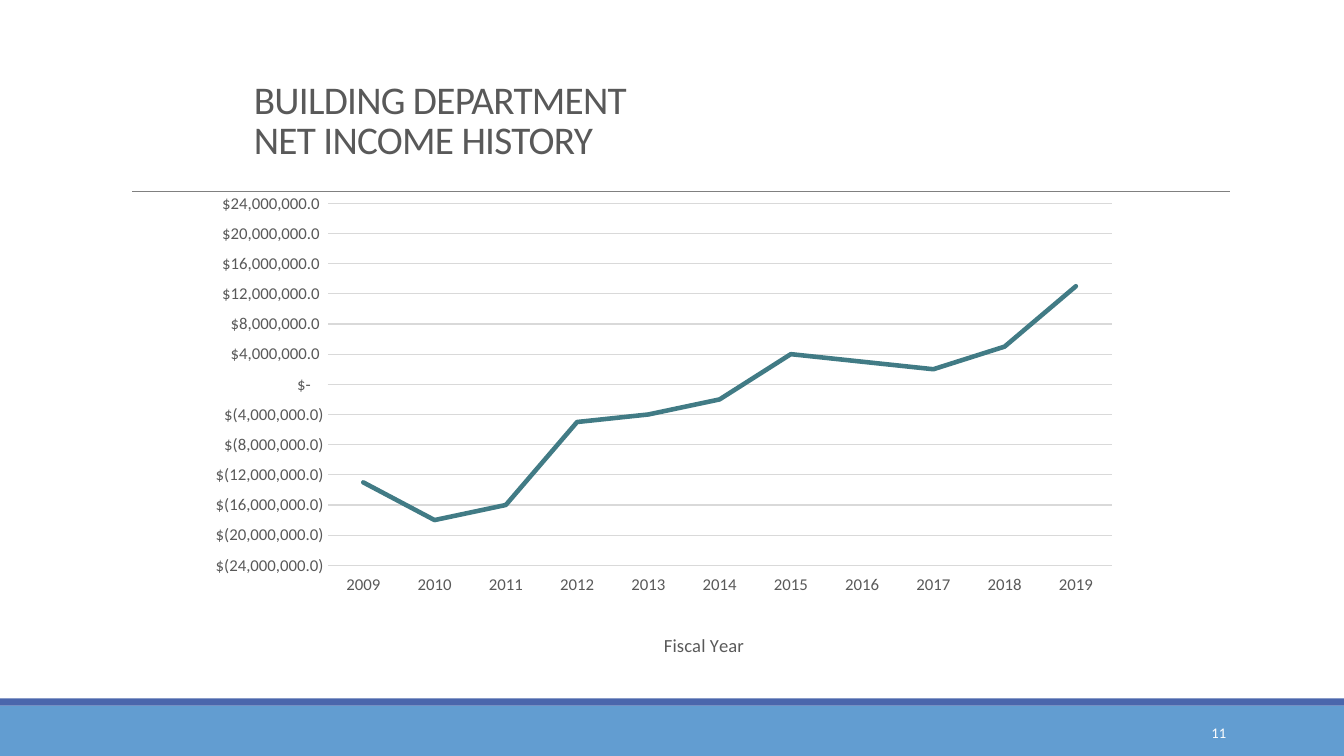
from lxml import etree
from pptx import Presentation
from pptx.chart.data import CategoryChartData
from pptx.dml.color import RGBColor
from pptx.enum import chart as charts, shapes, text
from pptx.oxml import parse_xml
from pptx.oxml.ns import nsdecls, qn
from pptx.util import Inches, Pt

FONT = "Calibri"
GREY, PALE, TEAL, WHITE = "595959", "D9D9D9", "417B85", "FFFFFF"
TITLE = "BUILDING DEPARTMENT\vNET INCOME HISTORY"
PAGE_NUMBER = "11"
FIRST_YEAR = 2009
NET_INCOME_MILLIONS = [-13, -18, -16, -5, -4, -2, 4, 3, 2, 5, 13]
MILLION = 1_000_000
ACCOUNTING = r'_("$"* #,##0.0_);_("$"* \(#,##0.0\);_("$"* "-"?_);_(@_)'
FOOTER_BANDS = [(7, 0.5, "629DD1"), (6.93, 0.07, "4A66AC")]  # top, height, colour
# Percentages of the chart frame
PLOT_LAYOUT = {"x": 14.3, "y": 4, "w": 83.6, "h": 76.5}
AXIS_TITLE_LAYOUT = {"x": 49.8, "y": 94}


def rgb(colour):
    return RGBColor.from_string(colour)


def style_font(font, size, colour):
    font.name, font.size, font.bold = FONT, Pt(size), False
    font.color.rgb = rgb(colour)


def style_line(line, width, colour):
    line.width = Pt(width)
    line.color.rgb = rgb(colour)


def add_text(page, place, content, size, colour, anchor, align):
    box = page.shapes.add_textbox(*map(Inches, place))
    frame = box.text_frame
    frame.word_wrap = True
    frame.vertical_anchor = anchor
    para = frame.paragraphs[0]
    para.text = content
    para.alignment = align
    for span in para.runs:
        style_font(span.font, size, colour)
    return para


def manual_layout(percentages, inner=False):
    """Build a c:layout element that fixes a chart part in place."""
    parts = '<c:layoutTarget val="inner"/>' if inner else ""
    parts += "".join(f'<c:{k}Mode val="edge"/>' for k in "xy")
    parts += "".join(f'<c:{k} val="{v / 100:.3f}"/>' for k, v in percentages.items())
    return parse_xml(f'<c:layout {nsdecls("c")}><c:manualLayout>{parts}'
                     "</c:manualLayout></c:layout>")


def set_layout(parent, index, layout):
    for old in parent.findall(qn("c:layout")):
        parent.remove(old)
    parent.insert(index, layout)


def add_income_chart(page):
    data = CategoryChartData()
    data.categories = [str(FIRST_YEAR + i) for i in range(len(NET_INCOME_MILLIONS))]
    data.add_series("Series 1", [v * MILLION for v in NET_INCOME_MILLIONS])
    place = map(Inches, (1.92, 1.83, 9.3, 4.75))
    chart = page.shapes.add_chart(charts.XL_CHART_TYPE.LINE, *place, data).chart
    chart.has_legend = chart.has_title = False
    style_font(chart.font, 12, GREY)
    plot = chart.plots[0]
    plot.vary_by_categories = False
    income = plot.series[0]
    income.smooth = False
    income.marker.style = charts.XL_MARKER_STYLE.NONE
    style_line(income.format.line, 3.25, TEAL)
    income._element.spPr.find(qn("a:ln")).set("cap", "rnd")

    years, dollars = chart.category_axis, chart.value_axis
    for axis in (years, dollars):
        axis.major_tick_mark = axis.minor_tick_mark = charts.XL_TICK_MARK.NONE
        style_font(axis.tick_labels.font, 12, GREY)
    years.tick_label_position = charts.XL_TICK_LABEL_POSITION.LOW
    style_line(years.format.line, 0.75, PALE)
    years.has_title = True
    para = years.axis_title.text_frame.paragraphs[0]
    para.text = "Fiscal Year"
    style_font(para.runs[0].font, 13.3, GREY)

    dollars.minimum_scale, dollars.maximum_scale = -24 * MILLION, 24 * MILLION
    dollars.major_unit = 4 * MILLION
    dollars.tick_labels.number_format = ACCOUNTING
    dollars.tick_labels.number_format_is_linked = False
    dollars.format.line.fill.background()
    style_line(dollars.major_gridlines.format.line, 0.75, PALE)

    set_layout(plot._element.getparent(), 0, manual_layout(PLOT_LAYOUT, inner=True))
    set_layout(years.axis_title._element, 1, manual_layout(AXIS_TITLE_LAYOUT))


def main():
    deck = Presentation()
    deck.slide_width, deck.slide_height = Inches(13.33), Inches(7.5)
    page = deck.slides.add_slide(deck.slide_layouts[6])

    for top, height, colour in FOOTER_BANDS:
        band = page.shapes.add_shape(shapes.MSO_SHAPE.RECTANGLE, 0, Inches(top),
                                     deck.slide_width, Inches(height))
        band.shadow.inherit = False
        band.fill.solid()
        band.fill.fore_color.rgb = rgb(colour)
        band.line.fill.background()

    rule = page.shapes.add_connector(shapes.MSO_CONNECTOR.STRAIGHT,
                                     *map(Inches, (1.31, 1.9, 12.2, 1.9)))
    style_line(rule.line, 0.5, "808080")
    etree.SubElement(rule._element.spPr, qn("a:effectLst"))

    title = add_text(page, (2.42, 0.74, 8.8, 0.92), TITLE, 28, GREY,
                     text.MSO_ANCHOR.BOTTOM, text.PP_ALIGN.LEFT)
    title.line_spacing = 0.85
    for span in title.runs:
        span.font._element.set("spc", "-50")

    add_income_chart(page)
    add_text(page, (10.83, 7.07, 1.43, 0.4), PAGE_NUMBER, 10.5, WHITE,
             text.MSO_ANCHOR.MIDDLE, text.PP_ALIGN.RIGHT)
    deck.save("out.pptx")


if __name__ == "__main__":
    main()
